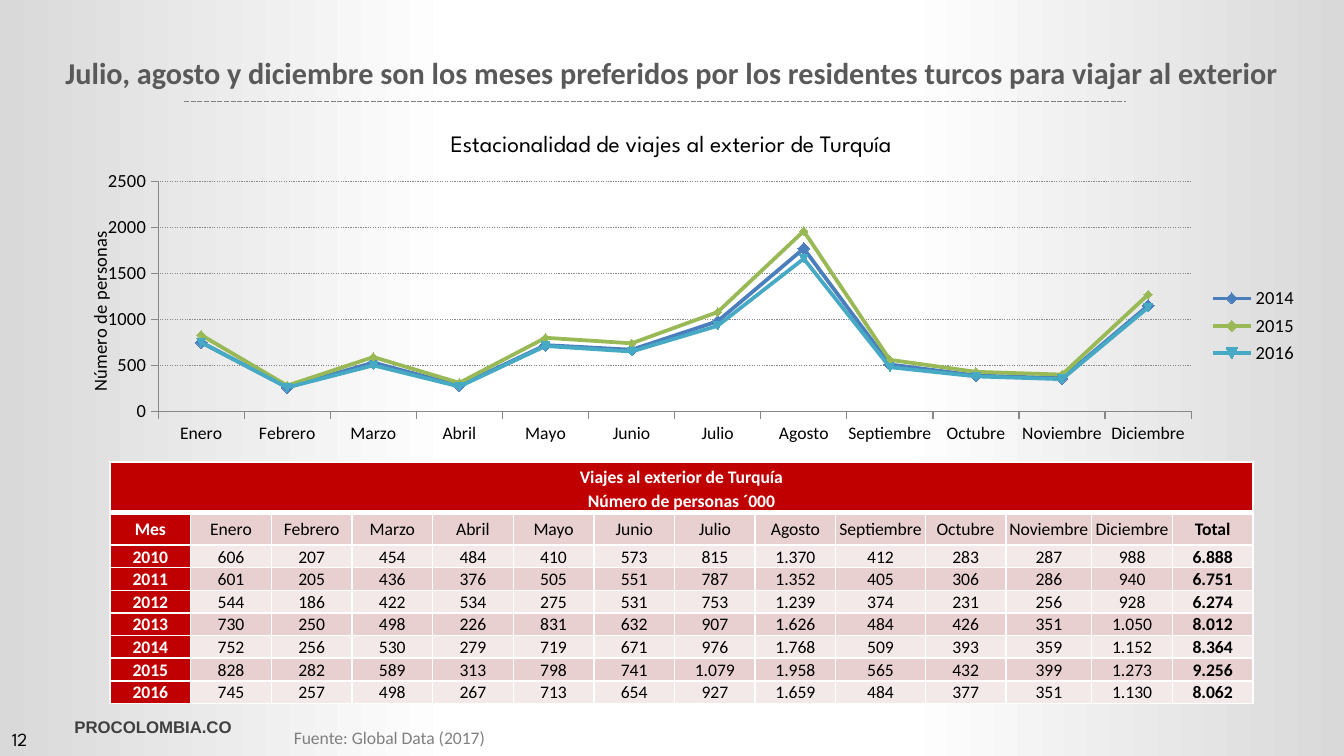
from dataclasses import dataclass

from lxml.etree import SubElement
from pptx import Presentation
from pptx.chart.data import CategoryChartData
from pptx.dml.color import RGBColor
from pptx.enum.chart import XL_CHART_TYPE, XL_LEGEND_POSITION, XL_MARKER_STYLE, XL_TICK_MARK
from pptx.enum.dml import MSO_LINE
from pptx.enum.shapes import MSO_CONNECTOR, MSO_SHAPE
from pptx.enum.text import MSO_ANCHOR, PP_ALIGN
from pptx.oxml import parse_xml
from pptx.oxml.ns import nsdecls, qn
from pptx.util import Inches, Pt

WIDTH, HEIGHT = 11.11, 6.25
RED, WHITE, BLACK, GRAY = "C00000", "FFFFFF", "000000", "888888"
BANDS = ("E8D0D0", "F4E9E9")
MONTHS = ["Enero", "Febrero", "Marzo", "Abril", "Mayo", "Junio", "Julio", "Agosto",
          "Septiembre", "Octubre", "Noviembre", "Diciembre"]
TABLE_TITLE = "Viajes al exterior de Turquía\nNúmero de personas ´000"
TRIPS = """2010 606 207 454 484 410 573 815 1.370 412 283 287 988 6.888
2011 601 205 436 376 505 551 787 1.352 405 306 286 940 6.751
2012 544 186 422 534 275 531 753 1.239 374 231 256 928 6.274
2013 730 250 498 226 831 632 907 1.626 484 426 351 1.050 8.012
2014 752 256 530 279 719 671 976 1.768 509 393 359 1.152 8.364
2015 828 282 589 313 798 741 1.079 1.958 565 432 399 1.273 9.256
2016 745 257 498 267 713 654 927 1.659 484 377 351 1.130 8.062"""


@dataclass
class Label:
    text: str
    left: float
    top: float
    width: float
    height: float
    size: float
    color: str
    font: str = "Calibri"
    bold: bool = False
    align: PP_ALIGN = PP_ALIGN.LEFT
    anchor: MSO_ANCHOR = MSO_ANCHOR.TOP


@dataclass
class YearSeries:
    name: str
    values: tuple
    line: str
    marker_fill: str
    marker: XL_MARKER_STYLE = XL_MARKER_STYLE.AUTOMATIC
    marker_size: int = 5


LABELS = [
    Label("PROCOLOMBIA.CO", 0.13, 5.88, 2.27, 0.27, 10, "404040", "Arial", True, PP_ALIGN.CENTER),
    Label("12", 0, 5.85, 0.67, 0.4, 11, BLACK, "League Spartan", anchor=MSO_ANCHOR.BOTTOM),
    Label("Fuente: Global Data (2017)", 2.33, 5.96, 3.62, 0.29, 10.5, "808080"),
    Label("Julio, agosto y diciembre son los meses preferidos por los residentes turcos "
          "para viajar al exterior", 0, 0.4, WIDTH, 0.35, 18, "595959", bold=True,
          align=PP_ALIGN.CENTER),
    Label("Estacionalidad de viajes al exterior de Turquía", 0, 1.02, 11.1, 0.34, 14, BLACK,
          "League Spartan", align=PP_ALIGN.CENTER),
]
SERIES = [
    YearSeries("2014", (750, 260, 530, 280, 720, 670, 980, 1770, 510, 390, 360, 1150),
               "4B7EBC", "4F81BD", XL_MARKER_STYLE.DIAMOND, 7),
    YearSeries("2015", (830, 280, 590, 310, 800, 740, 1080, 1960, 560, 430, 400, 1270),
               "98B955", "9BBB59"),
    YearSeries("2016", (750, 260, 500, 270, 710, 650, 930, 1660, 480, 380, 350, 1130),
               "46AAC5", "4BACC6"),
]


def rgb(color: str) -> RGBColor:
    return RGBColor.from_string(color)


def style_font(font, size: float, color: str, bold: bool = False, name: str = "Calibri") -> None:
    font.size, font.bold, font.name = Pt(size), bold, name
    font.color.rgb = rgb(color)


def add_background(slide) -> None:
    shape = slide.shapes.add_shape(MSO_SHAPE.RECTANGLE, 0, 0, Inches(WIDTH), Inches(HEIGHT))
    shape.shadow.inherit = False
    shape.line.fill.background()
    shape.fill.gradient()
    shape.fill.gradient_angle = 0
    stops = shape.element.spPr.find(qn("a:gradFill")).find(qn("a:gsLst"))
    for stop in list(stops):
        stops.remove(stop)
    for percent, color in ((0, "D9D9D9"), (34, WHITE), (67, WHITE), (100, "D9D9D9")):
        stop = SubElement(stops, qn("a:gs"), pos=str(percent * 1000))
        SubElement(stop, qn("a:srgbClr"), val=color)


def add_label(slide, label: Label) -> None:
    box = slide.shapes.add_textbox(Inches(label.left), Inches(label.top),
                                   Inches(label.width), Inches(label.height))
    frame = box.text_frame
    frame.word_wrap = True
    frame.vertical_anchor = label.anchor
    frame.text = label.text
    paragraph = frame.paragraphs[0]
    paragraph.alignment = label.align
    style_font(paragraph.runs[0].font, label.size, label.color, label.bold, label.font)


def add_title_rule(slide) -> None:
    rule = slide.shapes.add_connector(MSO_CONNECTOR.STRAIGHT, Inches(1.52), Inches(0.84),
                                      Inches(9.31), Inches(0.84))
    rule.line.color.rgb = rgb("808080")
    rule.line.width = Pt(1)
    rule.line.dash_style = MSO_LINE.SQUARE_DOT
    SubElement(rule.element.spPr, qn("a:effectLst"))


def manual_layout(**settings):
    items = "".join(f'<c:{key} val="{value}"/>' for key, value in settings.items())
    return parse_xml(f'<c:layout {nsdecls("c")}><c:manualLayout>{items}</c:manualLayout></c:layout>')


def style_axis(axis, size: float) -> None:
    style_font(axis.tick_labels.font, size, BLACK)
    axis.major_tick_mark = XL_TICK_MARK.OUTSIDE
    axis.format.line.color.rgb = rgb(GRAY)
    axis.format.line.width = Pt(0.75)


def add_trip_chart(slide) -> None:
    data = CategoryChartData(number_format="0")
    data.categories = MONTHS
    for year in SERIES:
        data.add_series(year.name, year.values)
    chart = slide.shapes.add_chart(XL_CHART_TYPE.LINE_MARKERS, Inches(0.59), Inches(1.19),
                                   Inches(10.24), Inches(3.01), data).chart
    style_font(chart.font, 11, BLACK)
    chart.has_title = False
    chart.has_legend = True
    chart.legend.position = XL_LEGEND_POSITION.RIGHT
    chart.legend.include_in_layout = False
    style_font(chart.legend.font, 11, BLACK)

    style_axis(chart.category_axis, 10.5)
    axis = chart.value_axis
    style_axis(axis, 11)
    axis.minimum_scale, axis.maximum_scale, axis.major_unit = 0, 2500, 500
    grid = axis.major_gridlines.format.line
    grid.color.rgb = rgb(GRAY)
    grid.width = Pt(0.75)
    grid.dash_style = MSO_LINE.ROUND_DOT
    frame = axis.axis_title.text_frame
    frame.text = "Número de personas"
    style_font(frame.paragraphs[0].runs[0].font, 11, BLACK)
    title = axis.axis_title._element
    for layout in title.findall(qn("c:layout")):
        title.remove(layout)
    title.find(qn("c:tx")).addnext(manual_layout(xMode="edge", yMode="edge", x=0.01, y=0.23))

    plot_area = chart._chartSpace.chart.plotArea
    for layout in plot_area.findall(qn("c:layout")):
        plot_area.remove(layout)
    plot_area.insert(0, manual_layout(layoutTarget="inner", xMode="edge", yMode="edge",
                                      x=0.07, y=0.103, w=0.834, h=0.632))
    chart.plots[0].vary_by_categories = False
    for series, year in zip(chart.plots[0].series, SERIES):
        series.smooth = False
        series.format.line.color.rgb = rgb(year.line)
        series.format.line.width = Pt(2.25)
        series.marker.style, series.marker.size = year.marker, year.marker_size
        series.marker.format.fill.solid()
        series.marker.format.fill.fore_color.rgb = rgb(year.marker_fill)
        series.marker.format.line.color.rgb = rgb(year.line)


def style_cell(cell, text: str, fill: str, color: str, bold: bool, bottom: float = 1) -> None:
    cell.margin_left = cell.margin_right = cell.margin_top = Inches(0.01)
    cell.margin_bottom = 0
    cell.vertical_anchor = MSO_ANCHOR.MIDDLE
    cell.text_frame.text = text
    for paragraph in cell.text_frame.paragraphs:
        paragraph.alignment = PP_ALIGN.CENTER
        for run in paragraph.runs:
            style_font(run.font, 10.5, color, bold)
    properties = cell._tc.get_or_add_tcPr()
    for side, width in (("L", 1), ("R", 1), ("T", 1), ("B", bottom)):
        border = SubElement(properties, qn(f"a:ln{side}"), w=str(Pt(width)))
        SubElement(SubElement(border, qn("a:solidFill")), qn("a:srgbClr"), val=WHITE)
    cell.fill.solid()
    cell.fill.fore_color.rgb = rgb(fill)


def add_trip_table(slide) -> None:
    rows = [["Mes", *MONTHS, "Total"]] + [line.split() for line in TRIPS.splitlines()]
    last = len(rows[0]) - 1
    table = slide.shapes.add_table(len(rows) + 1, last + 1, Inches(0.91), Inches(3.82),
                                   Inches(9.45), Inches(1.59)).table
    wide = {MONTHS.index("Septiembre") + 1: 0.74, MONTHS.index("Noviembre") + 1: 0.71}
    regular = (9.45 - sum(wide.values())) / (last + 1 - len(wide))
    for index, column in enumerate(table.columns):
        column.width = Inches(wide.get(index, regular))
    for index, row in enumerate(table.rows):
        row.height = Inches(0.27 if index < 2 else 0.15)

    table.cell(0, 0).merge(table.cell(0, last))
    for column in range(last + 1):
        style_cell(table.cell(0, column), "" if column else TABLE_TITLE, RED, WHITE, True, 3)
    for paragraph in table.cell(0, 0).text_frame.paragraphs:
        paragraph.line_spacing = 1.15
    for index, values in enumerate(rows):
        for column, text in enumerate(values):
            fill, color = (BANDS[index % 2], BLACK) if column else (RED, WHITE)
            style_cell(table.cell(index + 1, column), text, fill, color, column in (0, last))


def main() -> None:
    presentation = Presentation()
    presentation.slide_width, presentation.slide_height = Inches(WIDTH), Inches(HEIGHT)
    slide = presentation.slides.add_slide(presentation.slide_layouts[6])
    add_background(slide)
    add_trip_chart(slide)
    add_trip_table(slide)
    for label in LABELS:
        add_label(slide, label)
    add_title_rule(slide)
    presentation.save("out.pptx")


if __name__ == "__main__":
    main()
